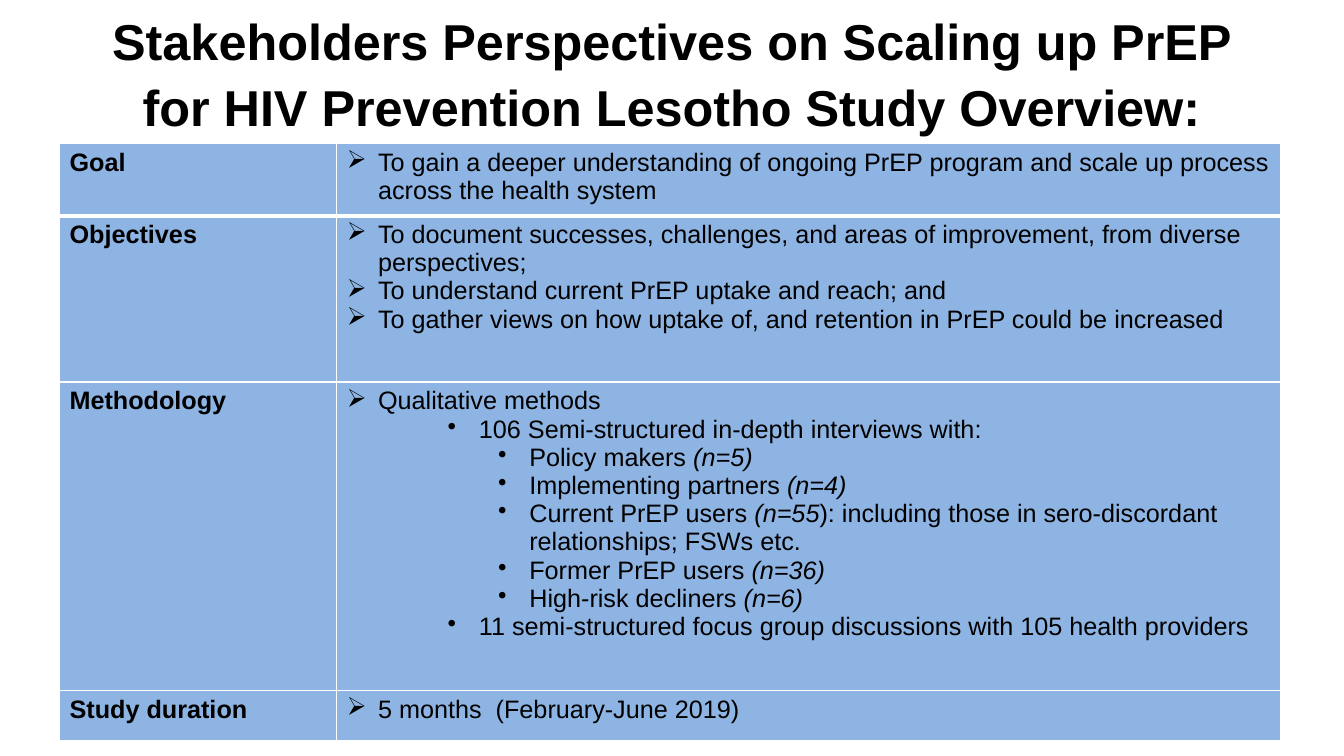
from dataclasses import dataclass

from lxml.etree import SubElement
from pptx import Presentation
from pptx.dml.color import RGBColor
from pptx.enum.text import MSO_ANCHOR as Anchor, PP_ALIGN as Align
from pptx.oxml import parse_xml
from pptx.oxml.ns import nsdecls, qn
from pptx.util import Inches, Pt


@dataclass(frozen=True)
class Theme:
    font: str = "Arial"
    ink: str = "000000"
    cell: str = "8EB4E3"
    rule: str = "FFFFFF"
    title_size: int = 36
    body_size: int = 18
    thin: int = 1
    thick: int = 3
    hang: float = 0.31


# Bullet sign and left indent in inches for each outline level
BULLETS = {0: ("➢", 0.31), 2: ("•", 1.31), 3: ("•", 1.81)}

TITLE = ("Stakeholders Perspectives on Scaling up PrEP "
         "for HIV Prevention Lesotho Study Overview:")

# Heading, row height in percent of the slide, (level, text) points;
# underscores switch italics on and off
OVERVIEW = [
    ("Goal", 9.6, [
        (0, "To gain a deeper understanding of ongoing PrEP program and "
            "scale up process across the health system"),
    ]),
    ("Objectives", 22, [
        (0, "To document successes, challenges, and areas of improvement, "
            "from diverse perspectives;"),
        (0, "To understand current PrEP uptake and reach; and"),
        (0, "To gather views on how uptake of, and retention in PrEP could "
            "be increased"),
    ]),
    ("Methodology", 40.8, [
        (0, "Qualitative methods"),
        (2, "106 Semi-structured in-depth interviews with:"),
        (3, "Policy makers _(n=5)_"),
        (3, "Implementing partners _(n=4)_"),
        (3, "Current PrEP users _(n=55_): including those in "
            "sero-discordant relationships; FSWs etc."),
        (3, "Former PrEP users _(n=36)_"),
        (3, "High-risk decliners _(n=6)_"),
        (2, "11 semi-structured focus group discussions with 105 health "
            "providers"),
    ]),
    ("Study duration", 6.67, [(0, "5 months  (February-June 2019)")]),
]


class SlideBuilder:
    """Places elements by percent of the slide's width and height."""

    def __init__(self, deck, theme):
        self.deck, self.theme = deck, theme
        self.slide = deck.slides.add_slide(deck.slide_layouts[6])

    def across(self, percent):
        return round(self.deck.slide_width * percent / 100)

    def down(self, percent):
        return round(self.deck.slide_height * percent / 100)

    def area(self, left, top, width, height):
        return (self.across(left), self.down(top),
                self.across(width), self.down(height))

    def add_runs(self, paragraph, text, size, bold=False):
        for index, part in enumerate(text.split("_")):
            if part:
                run = paragraph.add_run()
                run.text = part
                run.font.name = self.theme.font
                run.font.size = Pt(size)
                run.font.bold = bold
                run.font.italic = index % 2 == 1
                run.font.color.rgb = RGBColor.from_string(self.theme.ink)

    def title(self, text, *area):
        frame = self.slide.shapes.add_textbox(*self.area(*area)).text_frame
        frame.word_wrap = True
        frame.vertical_anchor = Anchor.MIDDLE
        heading = frame.paragraphs[0]
        heading.alignment = Align.CENTER
        heading.line_spacing = 1.08
        self.add_runs(heading, text, self.theme.title_size, bold=True)

    def points(self, frame, points):
        for index, (level, text) in enumerate(points):
            point = frame.add_paragraph() if index else frame.paragraphs[0]
            point.level = level
            sign, indent = BULLETS[level]
            properties = point._p.get_or_add_pPr()
            properties.set("marL", str(Inches(indent)))
            properties.set("indent", str(-Inches(self.theme.hang)))
            SubElement(properties, qn("a:buChar")).set("char", sign)
            self.add_runs(point, text, self.theme.body_size)

    def paint(self, cell, top, bottom):
        cell.fill.solid()
        cell.fill.fore_color.rgb = RGBColor.from_string(self.theme.cell)
        thin = self.theme.thin
        edges = {"lnL": thin, "lnR": thin, "lnT": top, "lnB": bottom}
        for place, (edge, weight) in enumerate(edges.items()):
            cell._tc.get_or_add_tcPr().insert(place, parse_xml(
                f'<a:{edge} {nsdecls("a")} w="{Pt(weight)}"><a:solidFill>'
                f'<a:srgbClr val="{self.theme.rule}"/></a:solidFill></a:{edge}>'))

    def overview(self, sections, left, top, widths):
        total = sum(height for _, height, _ in sections)
        table = self.slide.shapes.add_table(
            len(sections), len(widths),
            *self.area(left, top, sum(widths), total)).table
        for column, width in zip(table.columns, widths):
            column.width = self.across(width)
        for index, (heading, height, points) in enumerate(sections):
            table.rows[index].height = self.down(height)
            label, detail = table.rows[index].cells
            self.add_runs(label.text_frame.paragraphs[0], heading,
                          self.theme.body_size, bold=True)
            self.points(detail.text_frame, points)
            # The heavy rule runs between the first and second rows
            for cell in (label, detail):
                self.paint(cell,
                           self.theme.thick if index == 1 else self.theme.thin,
                           self.theme.thick if index == 0 else self.theme.thin)


def main():
    deck = Presentation()
    deck.slide_width, deck.slide_height = Inches(13.33), Inches(7.5)
    page = SlideBuilder(deck, Theme())
    # Heading
    page.title(TITLE, 6.15, 1.07, 87.7, 16.67)
    # Study overview table
    page.overview(OVERVIEW, 4.43, 18.93, (20.63, 70.2))
    deck.save("out.pptx")


if __name__ == "__main__":
    main()
